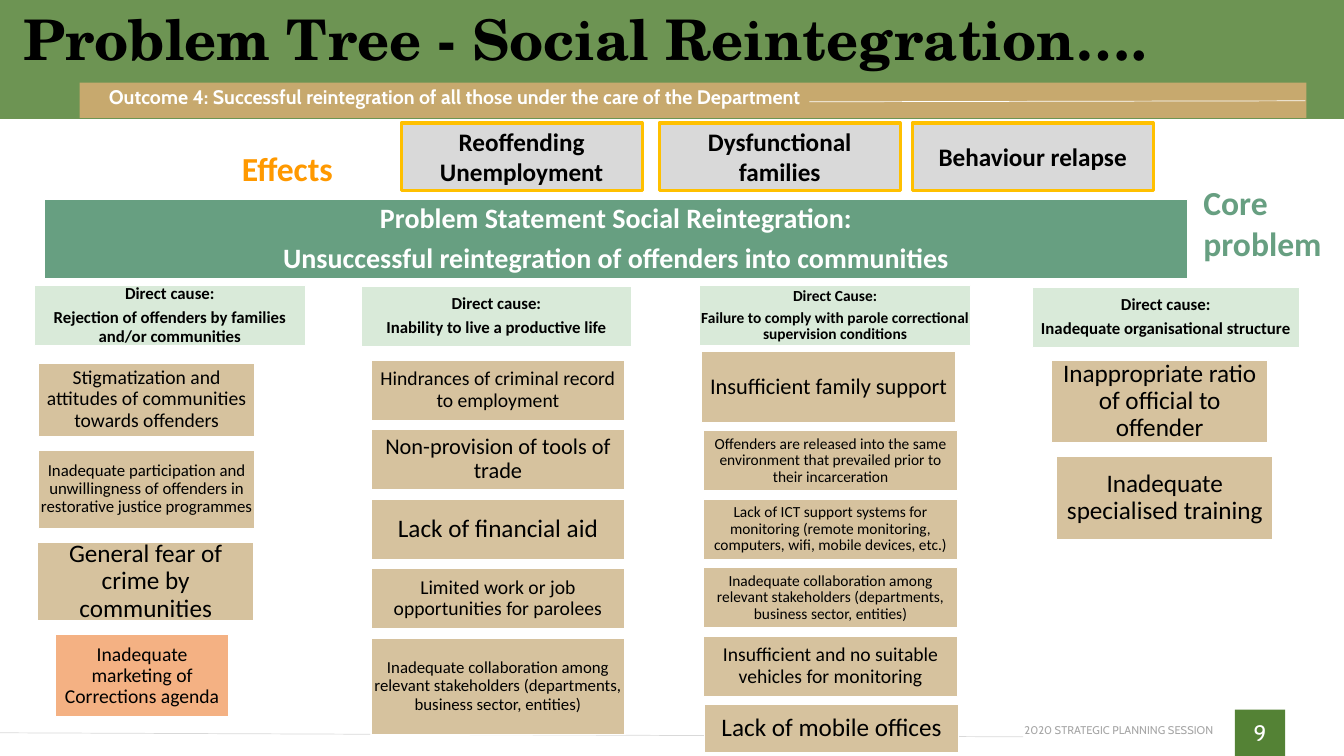
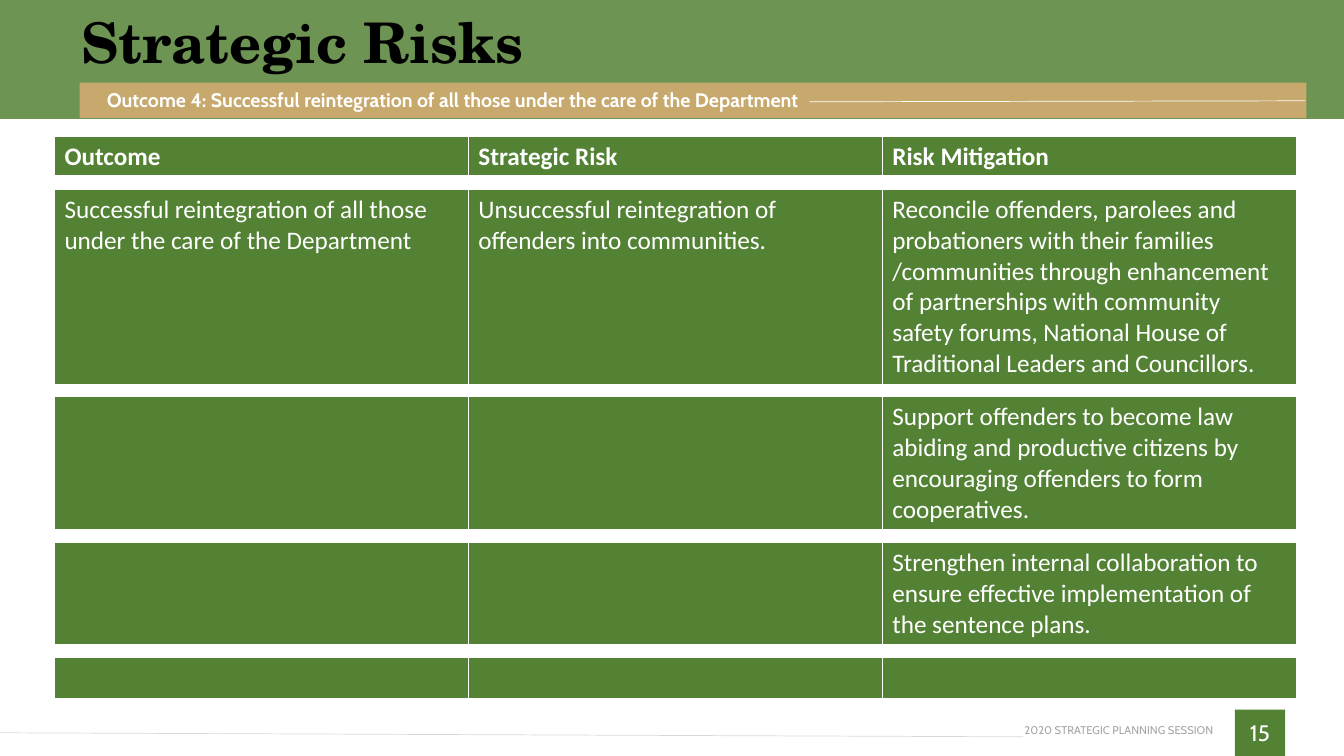
from dataclasses import dataclass

from lxml import etree
from pptx import Presentation
from pptx import util as u
from pptx.dml.color import RGBColor
from pptx.enum import shapes, text
from pptx.oxml.ns import qn

CELL = u.Inches(0.1)
GREEN = RGBColor(0x54, 0x82, 0x35)
SAND = RGBColor(0xC7, 0xA9, 0x6E)
TAN = RGBColor(0xD6, 0xC2, 0x9E)
ORANGE = RGBColor(0xF4, 0xB1, 0x83)
AMBER = RGBColor(0xFF, 0x99, 0x00)
GOLD = RGBColor(0xFF, 0xC0, 0x00)
TEAL = RGBColor(0x67, 0x9F, 0x81)
MINT = RGBColor(0xD9, 0xEA, 0xD9)
SILVER = RGBColor(0xD9, 0xD9, 0xD9)
GREY = RGBColor(0xA6, 0xA6, 0xA6)
WHITE = RGBColor(0xFF, 0xFF, 0xFF)
BLACK = RGBColor(0x00, 0x00, 0x00)

TITLE_FONT, BODY_FONT, FRAME_FONT = "TeX Gyre Schola", "Calibri", "Cabin"
LEFT, CENTER, RIGHT = text.PP_ALIGN.LEFT, text.PP_ALIGN.CENTER, text.PP_ALIGN.RIGHT
TOP, MIDDLE = text.MSO_ANCHOR.TOP, text.MSO_ANCHOR.MIDDLE
NO_INSET, TIGHT, ROOMY = (0, 0), (0.1, 0.1), (1, 0.5)
OUTCOME = "Outcome 4: Successful reintegration of all those under the care of the Department"


@dataclass
class Cause:
    label: str
    size: int
    height: float = 6
    shift: float = 0
    width: float = 0
    fill: RGBColor = TAN


@dataclass
class Branch:
    head: tuple
    lines: list
    size: int
    left: float
    top: float
    width: float
    gap: float
    causes: list


BRANCHES = [
    Branch((3.4, 28.3, 26.9, 6),
           ["Direct cause:", "Rejection of offenders by families and/or communities"],
           12, 3.8, 36, 21.5, 1.35, [
               Cause("Stigmatization and attitudes of communities towards offenders", 14, 7.3),
               Cause("Inadequate participation and unwillingness of offenders in "
                     "restorative justice programmes", 12, 7.8),
               Cause("General fear of crime by communities", 18, 7.8, -0.1),
               Cause("Inadequate marketing of Corrections agenda", 14, 8.2, 1.7, 17.2, ORANGE)]),
    Branch((35.8, 28.4, 26.9, 6),
           ["Direct cause:", "Inability to live a productive life"],
           12, 36.8, 35.7, 25.2, 0.9, [
               Cause("Hindrances of criminal record to employment", 14),
               Cause("Non-provision of tools of trade", 16),
               Cause("Lack of financial aid", 18),
               Cause("Limited work or job opportunities for parolees", 14),
               Cause("Inadequate collaboration among relevant stakeholders "
                     "(departments, business sector, entities)", 12, 9.6)]),
    Branch((69.4, 28.3, 26.9, 6),
           ["Direct Cause:", "Failure to comply with parole correctional supervision conditions"],
           11, 69.8, 34.9, 25.2, 0.8, [
               Cause("Insufficient family support", 16, 7, -0.2),
               Cause("Offenders are released into the same environment that prevailed "
                     "prior to their incarceration", 11),
               Cause("Lack of ICT support systems for monitoring (remote monitoring, "
                     "computers, wifi, mobile devices, etc.)", 11),
               Cause("Inadequate collaboration among relevant stakeholders "
                     "(departments, business sector, entities)", 11),
               Cause("Insufficient and no suitable vehicles for monitoring", 14),
               Cause("Lack of mobile offices", 18, 4.8, 0.1)]),
    Branch((102.4, 28.5, 26.5, 6),
           ["Direct cause:", "Inadequate organisational structure"],
           12, 104.3, 35.7, 21.5, 1.4, [
               Cause("Inappropriate ratio of official to offender", 18, 8.2),
               Cause("Inadequate specialised training", 18, 8.2, 0.5)]),
]

EFFECTS = [
    (39.8, ["Reoffending", "Unemployment"]),
    (65.4, ["Dysfunctional families"]),
    (90.5, ["Behaviour relapse"]),
]

RISK_ROWS = [
    (4, ["Outcome", "Strategic Risk", "Risk Mitigation"]),
    (19.3, ["Successful reintegration of all those under the care of the Department",
            "Unsuccessful reintegration of offenders into communities.",
            "Reconcile offenders, parolees and probationers with their families "
            "/communities through enhancement of partnerships with community safety "
            "forums, National House of Traditional Leaders and Councillors."]),
    (13.2, ["", "", "Support offenders to become law abiding and productive citizens "
                    "by encouraging offenders to form cooperatives."]),
    (10.1, ["", "", "Strengthen internal collaboration to ensure effective "
                    "implementation of the sentence plans."]),
    (4, ["", "", ""]),
]


def cells(*counts):
    return [int(n * CELL) for n in counts]


def style(p, size, color, font=BODY_FONT, bold=False, align=LEFT):
    p.alignment = align
    p.font.size = u.Pt(size)
    p.font.name = font
    p.font.bold = bold
    p.font.color.rgb = color


def write(sp, lines, size, color, font=BODY_FONT, bold=False, align=LEFT,
          anchor=MIDDLE, inset=ROOMY, spacing=None, after=0):
    tf = sp.text_frame
    tf.word_wrap = True
    tf.auto_size = text.MSO_AUTO_SIZE.NONE
    tf.vertical_anchor = anchor
    tf.margin_left = tf.margin_right = cells(inset[0])[0]
    tf.margin_top = tf.margin_bottom = cells(inset[1])[0]
    tf.text = "\n".join(lines)
    for p in tf.paragraphs:
        style(p, size, color, font, bold, align)
        p.line_spacing = spacing
        p.space_after = u.Pt(after)


def add_box(s, box, fill, line=None, line_width=1):
    sp = s.shapes.add_shape(shapes.MSO_SHAPE.RECTANGLE, *cells(*box))
    sp.shadow.inherit = False
    sp.fill.solid()
    sp.fill.fore_color.rgb = fill
    if line is None:
        sp.line.fill.background()
    else:
        sp.line.color.rgb = line
        sp.line.width = u.Pt(line_width)
    return sp


def add_label(s, box, lines, size, color, **options):
    write(s.shapes.add_textbox(*cells(*box)), lines, size, color, **options)


def add_rule(s, ends, color):
    line = s.shapes.add_connector(shapes.MSO_CONNECTOR.STRAIGHT, *cells(*ends))
    line.line.color.rgb = color
    line.line.width = u.Pt(0.5)
    etree.SubElement(line._element.spPr, qn("a:effectLst"))


def add_block(s, box, fill, lines, size, color=BLACK, bold=False):
    sp = add_box(s, box, fill, WHITE)
    write(sp, lines, size, color, bold=bold, align=CENTER, inset=TIGHT,
          spacing=0.9, after=round(size * 0.35, 1))


def build_frame(s, layout):
    add_box(s, (122.5, 70.4, 5, 4.6), GREEN)
    add_label(s, (101.5, 71.8, 18.9, 1.3), ["2020 STRATEGIC PLANNING SESSION"], 8, GREY,
              font=FRAME_FONT, align=RIGHT, inset=NO_INSET)
    add_rule(s, (101.5, 73.1, 0, 72.7), SILVER)
    band = add_box(s, (0, 0, 133.33, 11.8), GREEN)
    color = band.fill._xPr.find(qn("a:solidFill"))[0]
    etree.SubElement(color, qn("a:alpha"), val="85000")
    add_box(s, (7.9, 8.2, 121.7, 3.5), SAND)
    add_rule(s, (80.3, 10.1, 129.5, 10), WHITE)
    for sp in list(s.shapes):
        if not sp.is_placeholder:
            layout.shapes._spTree.append(sp._element)


def add_heading(s, title, box, anchor, inset, outcome_at, number):
    sp = s.shapes.title
    sp.left, sp.top, sp.width, sp.height = cells(*box)
    write(sp, [title], 40, BLACK, font=TITLE_FONT, bold=True,
          anchor=anchor, inset=inset, spacing=0.9)
    add_label(s, (*outcome_at, 75.1, 2.4), [OUTCOME], 14, WHITE,
              font=FRAME_FONT, bold=True, inset=NO_INSET, after=3)
    add_label(s, (122.5, 70.4, 5, 4.6), [str(number)], 16, WHITE,
              font=FRAME_FONT, align=CENTER)


def add_branch(s, branch):
    add_block(s, branch.head, MINT, branch.lines, branch.size, bold=True)
    top = branch.top
    for cause in branch.causes:
        box = (branch.left + cause.shift, top, cause.width or branch.width, cause.height)
        add_block(s, box, cause.fill, [cause.label], cause.size)
        top += cause.height + branch.gap


def build_problem_tree(s):
    add_heading(s, "Problem Tree - Social Reintegration….", (1.3, -1.3, 122.8, 11.1),
                MIDDLE, ROOMY, (10.8, 8.4), 9)
    add_block(s, (4.4, 19.8, 113.4, 7.9), TEAL,
              ["Problem Statement Social Reintegration:",
               "Unsuccessful reintegration of offenders into communities"], 20, WHITE, True)
    for branch in BRANCHES:
        add_branch(s, branch)
    for left, lines in EFFECTS:
        sp = add_box(s, (left, 12.2, 23.9, 6.7), SILVER, GOLD, 2.25)
        write(sp, lines, 18, BLACK, bold=True, align=CENTER)
    add_label(s, (23, 14.2, 14.2, 5), ["Effects"], 24, AMBER, bold=True, anchor=TOP)
    add_label(s, (118.4, 17.6, 14.3, 9.1), ["Core problem"], 24, TEAL, bold=True, anchor=TOP)


def set_borders(cell, bottom):
    tcPr = cell._tc.get_or_add_tcPr()
    for side, width in (("L", 1), ("R", 1), ("T", 1), ("B", bottom)):
        ln = etree.SubElement(tcPr, qn("a:ln" + side), w=str(u.Pt(width)))
        fill = etree.SubElement(ln, qn("a:solidFill"))
        etree.SubElement(fill, qn("a:srgbClr"), val=str(WHITE))


def fill_cell(cell, words, header):
    set_borders(cell, 3 if header else 1)
    cell.fill.solid()
    cell.fill.fore_color.rgb = GREEN
    cell.text = words
    style(cell.text_frame.paragraphs[0], 18, WHITE, bold=header)


def clear_cell(cell):
    set_borders(cell, 1)
    cell.fill.solid()
    cell.fill.fore_color.rgb = WHITE
    cell.margin_top = cell.margin_bottom = 0
    p = cell.text_frame.paragraphs[0]
    etree.SubElement(p._p, qn("a:endParaRPr"), sz="400")


def build_risks(s):
    add_heading(s, "Strategic Risks", (8.1, 1.5, 115.6, 5.9), TOP, NO_INSET, (10.6, 8.7), 15)
    gap = 1.25
    count = 2 * len(RISK_ROWS) - 1
    height = sum(h for h, _ in RISK_ROWS) + gap * (len(RISK_ROWS) - 1)
    table = s.shapes.add_table(count, 3, *cells(5.4, 13.5, 123.2, height)).table
    for i, row in enumerate(table.rows):
        spacer = i % 2 == 1
        row_height, words = RISK_ROWS[i // 2]
        row.height = cells(gap if spacer else row_height)[0]
        for cell, label in zip(row.cells, words):
            if spacer:
                clear_cell(cell)
            else:
                fill_cell(cell, label, i == 0)


def main():
    prs = Presentation()
    prs.slide_width, prs.slide_height = cells(133.33, 75)
    layout = prs.slide_layouts[5]
    tree, risks = [prs.slides.add_slide(layout) for _ in range(2)]
    build_frame(tree, layout)
    build_problem_tree(tree)
    build_risks(risks)
    prs.save("out.pptx")


if __name__ == "__main__":
    main()
